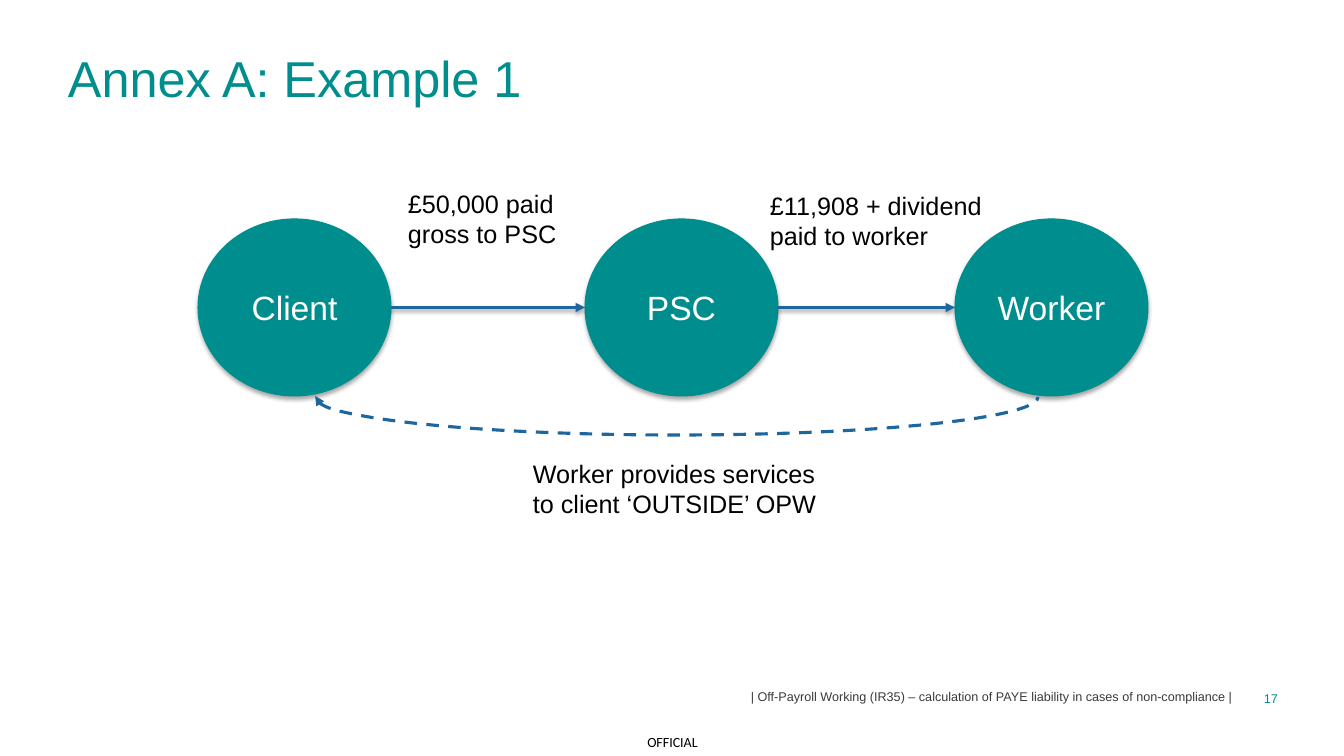
from itertools import pairwise

from lxml.etree import SubElement
from pptx import Presentation
from pptx.dml.color import RGBColor
from pptx.enum.dml import MSO_LINE
from pptx.enum.shapes import MSO_CONNECTOR, MSO_SHAPE
from pptx.enum.text import MSO_ANCHOR as ANCHOR, MSO_AUTO_SIZE, PP_ALIGN as ALIGN
from pptx.oxml.ns import qn
from pptx.util import Pt

PX = 914400 / 100.8
COLOURS = {"teal": "008D8E", "blue": "1E679E", "black": "000000",
           "white": "FFFFFF", "grey": "3B3A3D"}


def emu(*lengths):
    """Turn px lengths into EMU."""
    return [round(length * PX) for length in lengths]


def colour(name):
    """Look up a named colour."""
    return RGBColor.from_string(COLOURS[name])


def write(shape, text, size, ink, align=ALIGN.LEFT, anchor=ANCHOR.TOP,
          font="Arial", inset=True):
    """Fill a shape with one formatted paragraph."""
    frame = shape.text_frame
    frame.text = text
    frame.word_wrap = True
    frame.auto_size = MSO_AUTO_SIZE.NONE
    frame.vertical_anchor = anchor
    if not inset:
        frame.margin_left = frame.margin_right = 0
        frame.margin_top = frame.margin_bottom = 0
    para = frame.paragraphs[0]
    para.alignment = align
    for span in para.runs:
        span.font.name = font
        span.font.size = Pt(size)
        span.font.color.rgb = colour(ink)
    return para


def add_text(page, box, *args, **options):
    """Add a text box in the given box."""
    write(page.shapes.add_textbox(*emu(*box)), *args, **options)


def add_shadow(shape):
    """Give a shape a soft shadow falling straight down."""
    effects = SubElement(shape._element.spPr, qn("a:effectLst"))
    shadow = SubElement(effects, qn("a:outerShdw"), blurRad=str(Pt(3.1)),
                        dist=str(Pt(1.8)), dir="5400000", rotWithShape="0")
    black = SubElement(shadow, qn("a:srgbClr"), val=COLOURS["black"])
    SubElement(black, qn("a:alpha"), val="35000")


def style_arrow(shape, end, dash=None):
    """Draw a blue line with a triangle at one end."""
    line = shape.line
    line.color.rgb = colour("blue")
    line.width = Pt(2.25)
    if dash:
        line.dash_style = dash
    SubElement(shape._element.spPr.find(qn("a:ln")), qn(end), type="triangle")


def add_title(page, box, text):
    """Place and format the title placeholder."""
    title = page.shapes.title
    title.left, title.top, title.width, title.height = emu(*box)
    para = write(title, text, 36, "teal", inset=False)
    para.line_spacing = Pt(40)
    para.space_after = Pt(8)


def add_party(page, box, name):
    """Draw one party as a labelled ellipse."""
    party = page.shapes.add_shape(MSO_SHAPE.OVAL, *emu(*box))
    party.fill.solid()
    party.fill.fore_color.rgb = colour("teal")
    party.line.color.rgb = colour("teal")
    party.line.width = Pt(0.75)
    add_shadow(party)
    write(party, name, 24, "white", ALIGN.CENTER, ANCHOR.MIDDLE)


def add_services_arc(page, box):
    """Draw the dashed arc that leads back to the client."""
    arc = page.shapes.add_shape(MSO_SHAPE.ARC, *emu(*box))
    arc.adjustments[0] = 107.9
    arc.adjustments[1] = 0
    arc.fill.background()
    style_arrow(arc, "a:headEnd", MSO_LINE.DASH)
    arc.shadow.inherit = False
    arc._element.spPr.find(qn("a:xfrm")).set("flipV", "1")


def add_diagram(page, box):
    """Draw the parties, the payments between them and the services."""
    left, top, width, height = box
    party_width, party_height = 193, 177
    middle = top + party_height / 2
    starts = [left, left + 387, left + width - party_width]
    for start, name in zip(starts, ("Client", "PSC", "Worker")):
        add_party(page, (start, top, party_width, party_height), name)
    for payer, payee in pairwise(starts):
        ends = emu(payer + party_width, middle, payee, middle)
        arrow = page.shapes.add_connector(MSO_CONNECTOR.STRAIGHT, *ends)
        style_arrow(arrow, "a:tailEnd")
        add_shadow(arrow)
    add_services_arc(page, (left + 117, top + 140, 723, 76))
    labels = [
        (200, -36, 174, "£50,000 paid gross to PSC"),
        (562, -34, 234, "£11,908 + dividend paid to worker"),
        (325, height - 72, 316, "Worker provides services to client ‘OUTSIDE’ OPW"),
    ]
    for across, down, label_width, text in labels:
        add_text(page, (left + across, top + down, label_width, 72),
                 text, 18, "black")


def add_footer(page, box):
    """Place the running footer, page number and marking."""
    left, top, width, height = box
    add_text(page, (left, top, 989, 22),
             "| Off-Payroll Working (IR35) – calculation of PAYE liability "
             "in cases of non-compliance |", 9, "grey", ALIGN.RIGHT,
             ANCHOR.MIDDLE, inset=False)
    add_text(page, (left + width - 34, top + 5, 34, 15), "17", 9, "teal",
             ALIGN.RIGHT, inset=False)
    add_text(page, (left + 389, top + height - 29, 81, 29), "OFFICIAL", 10,
             "black", ALIGN.CENTER, ANCHOR.MIDDLE, "Calibri", inset=False)


def main():
    """Build and save the slide."""
    deck = Presentation()
    deck.slide_width, deck.slide_height = emu(1344, 756)
    page = deck.slides.add_slide(deck.slide_layouts[5])
    add_title(page, (68, 52, 1210, 92), "Annex A: Example 1")
    add_diagram(page, (198, 219, 950, 306))
    add_footer(page, (243, 686, 1035, 70))
    deck.save("out.pptx")


if __name__ == "__main__":
    main()
